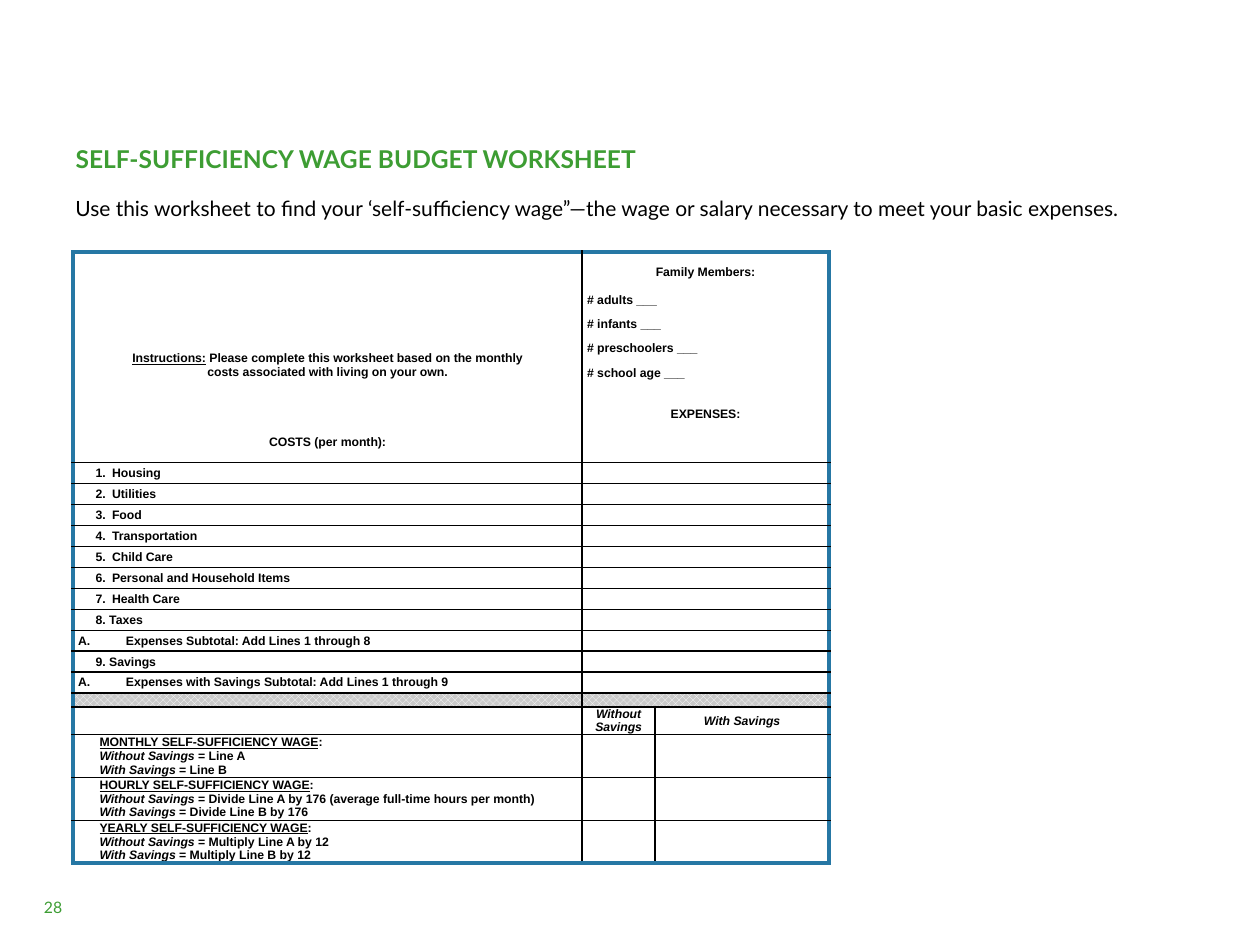
from lxml import etree
from pptx import Presentation
from pptx.dml.color import RGBColor
from pptx.enum.dml import MSO_PATTERN
from pptx.enum.text import MSO_ANCHOR, MSO_AUTO_SIZE, PP_ALIGN
from pptx.oxml.ns import qn
from pptx.util import Inches, Pt

LEFT, CENTER = PP_ALIGN.LEFT, PP_ALIGN.CENTER
TOP, MIDDLE, BOTTOM = MSO_ANCHOR.TOP, MSO_ANCHOR.MIDDLE, MSO_ANCHOR.BOTTOM
CROSSHATCH = MSO_PATTERN.DIAGONAL_CROSS
NO_AUTOFIT = MSO_AUTO_SIZE.NONE

GREEN = RGBColor(0x3D, 0x9D, 0x33)
BLUE = RGBColor(0x26, 0x77, 0xA4)
BLACK = RGBColor(0, 0, 0)
WHITE = RGBColor(0xFF, 0xFF, 0xFF)
GRAY = RGBColor(0xCA, 0xCA, 0xCA)

TITLE = "SELF-SUFFICIENCY WAGE BUDGET WORKSHEET"
INTRO = ("Use this worksheet to find your ‘self-sufficiency wage”—the wage or salary "
         "necessary to meet your basic expenses.")
PAGE_NUMBER = "28"

INSTRUCTIONS = [
    ([("Instructions:", "u"), (" Please complete this worksheet based on the monthly", "")], 0),
    ([("costs associated with living on your own.", "")], 0),
    ([("COSTS (per month):", "")], 32),
]
FAMILY = [
    ("Family Members:", CENTER, 0, 0),
    ("# adults ___", LEFT, 8, 6),
    ("# infants ___", LEFT, 0, 6),
    ("# preschoolers ___", LEFT, 0, 6),
    ("# school age ___", LEFT, 0, 0),
    ("EXPENSES:", CENTER, 16, 0),
]
COSTS = [
    ("1.\tHousing", "numbered"),
    ("2.\tUtilities", "numbered"),
    ("3.\tFood", "numbered"),
    ("4.\tTransportation", "numbered"),
    ("5.\tChild Care", "numbered"),
    ("6.\tPersonal and Household Items", "numbered"),
    ("7.\tHealth Care", "numbered"),
    ("8. Taxes", "plain"),
    ("Expenses Subtotal: Add Lines 1 through 8", "lettered"),
    ("9. Savings", "plain"),
    ("Expenses with Savings Subtotal: Add Lines 1 through 9", "lettered"),
]
INDENTS = {"numbered": (0.27, -0.13), "plain": (0.14, 0), "lettered": (0.38, -0.38)}
SAVINGS_HEADERS = ["Without Savings", "With Savings"]
WAGES = [
    ("MONTHLY", "Line A", "Line B"),
    ("HOURLY", "Divide Line A by 176 (average full-time hours per month)",
     "Divide Line B by 176"),
    ("YEARLY", "Multiply Line A by 12", "Multiply Line B by 12"),
]

COLUMN_WIDTHS = [4.04, 0.58, 1.38]
ROW_HEIGHTS = [1.67] + [1 / 6] * len(COSTS) + [0.11, 0.22] + [0.34] * len(WAGES)
SHADED_ROW = len(COSTS) + 1
HEADER_ROW = SHADED_ROW + 1
LAST_ROW, LAST_COLUMN = len(ROW_HEIGHTS) - 1, len(COLUMN_WIDTHS) - 1


def add_run(paragraph, text, font, size, color, bold=False, style=""):
    run = paragraph.add_run()
    run.text = text
    run.font.name, run.font.size, run.font.bold = font, Pt(size), bold
    run.font.color.rgb = color
    run.font.italic, run.font.underline = "i" in style, "u" in style


def set_indent(paragraph, margin, first_line):
    properties = paragraph._p.get_or_add_pPr()
    properties.set("marL", str(Inches(margin)))
    properties.set("indent", str(Inches(first_line)))
    return properties


def write_line(cell, runs, align=LEFT, before=0, after=0):
    frame = cell.text_frame
    paragraph = frame.add_paragraph() if frame.text else frame.paragraphs[0]
    paragraph.alignment = align
    if before:
        paragraph.space_before = Pt(before)
    if after:
        paragraph.space_after = Pt(after)
    for text, style in runs:
        add_run(paragraph, text, "Arial", 7, BLACK, True, style)
    return paragraph


def set_borders(cell, row, column, merged):
    at_right = column == LAST_COLUMN or (merged and column == 1)
    outer = {"lnL": column == 0, "lnR": at_right, "lnT": row == 0, "lnB": row == LAST_ROW}
    properties = cell._tc.get_or_add_tcPr()
    for index, (side, is_frame) in enumerate(outer.items()):
        line = etree.Element(qn(f"a:{side}"), w=str(Pt(2.25 if is_frame else 1)))
        if side == "lnL" and cell.is_spanned:
            etree.SubElement(line, qn("a:noFill"))
        else:
            fill = etree.SubElement(line, qn("a:solidFill"))
            etree.SubElement(fill, qn("a:srgbClr"), val=str(BLUE if is_frame else BLACK))
        properties.insert(index, line)


def format_cells(table):
    for row in range(LAST_ROW + 1):
        merged = row < HEADER_ROW
        if merged:
            table.cell(row, 1).merge(table.cell(row, LAST_COLUMN))
        for column in range(LAST_COLUMN + 1):
            cell = table.cell(row, column)
            cell.margin_left = cell.margin_right = Inches(0.04)
            cell.margin_top = cell.margin_bottom = 0
            cell.vertical_anchor = MIDDLE
            if row == SHADED_ROW:
                cell.fill.patterned()
                cell.fill.pattern = CROSSHATCH
                cell.fill.fore_color.rgb, cell.fill.back_color.rgb = WHITE, GRAY
            else:
                cell.fill.background()
            cell.text_frame.paragraphs[0]._p.get_or_add_endParaRPr().set("sz", "600")
            set_borders(cell, row, column, merged)


def fill_table(table):
    instructions, family = table.cell(0, 0), table.cell(0, 1)
    instructions.vertical_anchor, family.vertical_anchor = BOTTOM, TOP
    instructions.margin_bottom = family.margin_top = Inches(0.11)
    for runs, before in INSTRUCTIONS:
        write_line(instructions, runs, CENTER, before)
    for text, align, before, after in FAMILY:
        write_line(family, [(text, "")], align, before, after)
    for row, (text, kind) in enumerate(COSTS, 1):
        paragraph = write_line(table.cell(row, 0), [(text, "")])
        properties = set_indent(paragraph, *INDENTS[kind])
        if kind == "lettered":
            etree.SubElement(properties, qn("a:buFont"), typeface="Arial")
            etree.SubElement(properties, qn("a:buAutoNum"), type="alphaUcPeriod")
    for column, text in enumerate(SAVINGS_HEADERS, 1):
        write_line(table.cell(HEADER_ROW, column), [(text, "i")], CENTER)
    for row, (period, without, with_savings) in enumerate(WAGES, HEADER_ROW + 1):
        lines = [
            [(f"{period} SELF-SUFFICIENCY WAGE", "u"), (":", "")],
            [(SAVINGS_HEADERS[0], "i"), (f" = {without}", "")],
            [(SAVINGS_HEADERS[1], "i"), (f" = {with_savings}", "")],
        ]
        for runs in lines:
            set_indent(write_line(table.cell(row, 0), runs), 0.17, 0)


def place_text(shape, box, text, size, color, bold=False, spacing=1.0, anchor=TOP):
    shape.left, shape.top, shape.width, shape.height = map(Inches, box)
    frame = shape.text_frame
    frame.word_wrap, frame.auto_size, frame.vertical_anchor = True, NO_AUTOFIT, anchor
    paragraph = frame.paragraphs[0]
    paragraph.alignment, paragraph.line_spacing = LEFT, spacing
    add_run(paragraph, text, "Lato", size, color, bold)


def main():
    """Build the budget worksheet slide."""
    presentation = Presentation()
    presentation.slide_width, presentation.slide_height = Inches(10), Inches(7.5)
    slide = presentation.slides.add_slide(presentation.slide_layouts[5])
    place_text(slide.shapes.title, (0.5, 1, 9, 0.46), TITLE, 14, GREEN, True, 1.4)

    table = slide.shapes.add_table(
        LAST_ROW + 1, LAST_COLUMN + 1, Inches(0.58), Inches(2),
        Inches(sum(COLUMN_WIDTHS)), Inches(sum(ROW_HEIGHTS))).table
    table.first_row = table.horz_banding = False
    for column, width in zip(table.columns, COLUMN_WIDTHS):
        column.width = Inches(width)
    for row, height in zip(table.rows, ROW_HEIGHTS):
        row.height = Inches(height)
    format_cells(table)
    fill_table(table)

    intro = slide.shapes.add_textbox(0, 0, 0, 0)
    place_text(intro, (0.5, 1.46, 9, 0.45), INTRO, 12, BLACK, spacing=1.2)
    number = slide.shapes.add_textbox(0, 0, 0, 0)
    place_text(number, (0.25, 7, 0.5, 0.4), PAGE_NUMBER, 9, GREEN, anchor=MIDDLE)
    presentation.save("out.pptx")


if __name__ == "__main__":
    main()
